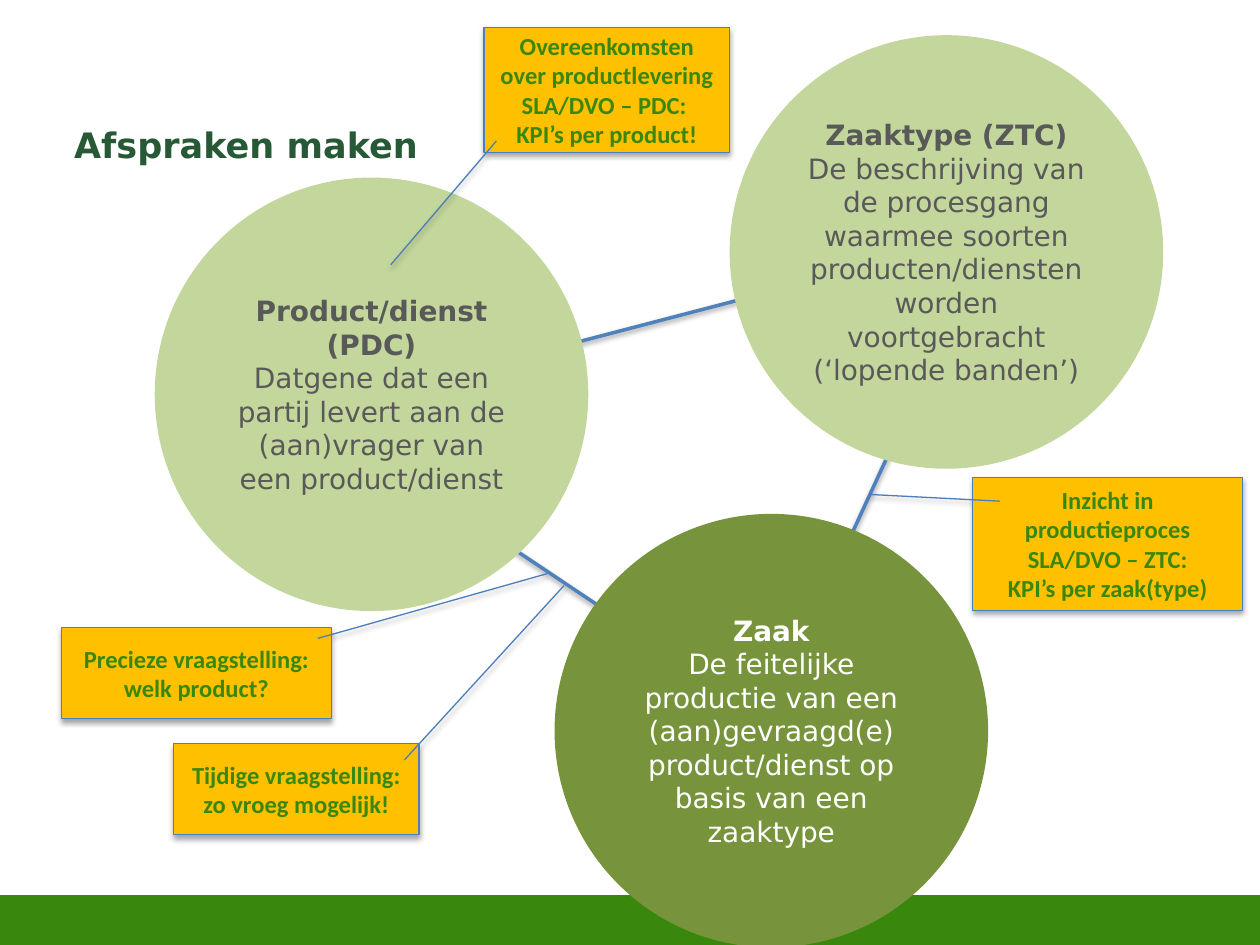
"""Build the slide about agreements on products, case types and cases."""
from pptx import Presentation
from pptx.dml.color import RGBColor
from pptx.enum.shapes import MSO_CONNECTOR, MSO_SHAPE
from pptx.enum.text import MSO_ANCHOR, PP_ALIGN
from pptx.oxml import parse_xml
from pptx.oxml.ns import nsdecls
from pptx.util import Cm, Pt

COLOURS = {
    "bar": "39870C",
    "title": "275937",
    "light": "C3D69B",
    "dark": "77933C",
    "grey": "595959",
    "white": "FFFFFF",
    "note": "FFC000",
    "note line": "4B7EBC",
    "link": "4F81BD",
}
COLOURS = {name: RGBColor.from_string(value) for name, value in COLOURS.items()}


def add_shadow(shape, distance, opacity):
    shape._element.spPr.append(parse_xml(
        f'<a:effectLst {nsdecls("a")}><a:outerShdw blurRad="40000" dist="{distance}" '
        f'dir="5400000" rotWithShape="0"><a:srgbClr val="000000">'
        f'<a:alpha val="{opacity}"/></a:srgbClr></a:outerShdw></a:effectLst>'))


def add_span(para, text, font, size, colour, bold=True):
    span = para.add_run()
    span.text = text
    span.font.name = font
    span.font.size = Pt(size)
    span.font.bold = bold
    span.font.color.rgb = COLOURS[colour]


deck = Presentation()
deck.slide_width, deck.slide_height = Cm(25.4), Cm(19.05)
page = deck.slides.add_slide(deck.slide_layouts[5])

title = page.shapes.title
title.left, title.top, title.width, title.height = Cm(1.24), Cm(2.36), Cm(22.86), Cm(1.85)
title.text_frame.vertical_anchor = MSO_ANCHOR.TOP
para = title.text_frame.paragraphs[0]
para.alignment = PP_ALIGN.LEFT
add_span(para, "Afspraken maken", "DejaVu Sans", 20, "title")

bar = page.shapes.add_shape(MSO_SHAPE.RECTANGLE, Cm(0), Cm(18.08), Cm(25.4), Cm(0.98))
bar.shadow.inherit = False
bar.fill.solid()
bar.fill.fore_color.rgb = COLOURS["bar"]
bar.line.color.rgb = COLOURS["bar"]
bar.line.width = Pt(2)

links = [
    (16.97, 11.2, 18.08, 8.79),
    (10.03, 10.85, 12.5, 12.5),
    (11.51, 6.93, 15.19, 5.97),
]
for ends in links:
    link = page.shapes.add_connector(MSO_CONNECTOR.STRAIGHT, *map(Cm, ends))
    link.line.color.rgb = COLOURS["link"]
    link.line.width = Pt(2)
    add_shadow(link, 20000, 38000)

diameter = Cm(8.74)
circles = [
    (3.12, 3.58, "light", "grey", "Product/dienst (PDC)",
     "Datgene dat een partij levert aan de (aan)vrager van een product/dienst"),
    (11.18, 10.36, "dark", "white", "Zaak",
     "De feitelijke productie van een (aan)gevraagd(e) product/dienst op basis van een zaaktype"),
    (14.71, 0.71, "light", "grey", "Zaaktype (ZTC)",
     "De beschrijving van de procesgang waarmee soorten producten/diensten worden "
     "voortgebracht (‘lopende banden’)"),
]
for left, top, fill, colour, heading, description in circles:
    circle = page.shapes.add_shape(MSO_SHAPE.OVAL, Cm(left), Cm(top), diameter, diameter)
    circle.shadow.inherit = False
    circle.fill.solid()
    circle.fill.fore_color.rgb = COLOURS[fill]
    circle.line.fill.background()
    circle.text_frame.vertical_anchor = MSO_ANCHOR.MIDDLE
    para = circle.text_frame.paragraphs[0]
    para.alignment = PP_ALIGN.CENTER
    add_span(para, heading, "DejaVu Sans", 16, colour)
    para.add_line_break()
    add_span(para, description, "DejaVu Sans", 16, colour, bold=False)

callouts = [
    (1.24, 12.65, 5.44, 1.84, (0.12, 0.95, -0.59, 1.8),
     [["Precieze vraagstelling: welk product?"]]),
    (3.5, 14.99, 4.95, 1.84, (0.18, 0.94, -1.73, 1.59),
     [["Tijdige vraagstelling: zo vroeg mogelijk!"]]),
    (9.76, 0.55, 4.95, 2.52, (0.91, 0.05, 1.9, -0.38),
     [["Overeenkomsten over productlevering SLA/DVO – PDC: ", "KPI’s per product!"]]),
    (19.61, 9.62, 5.44, 2.69, (0.18, 0.1, 0.13, -0.38),
     [["Inzicht in productieproces SLA/DVO – ZTC:"], ["KPI’s per zaak(type)"]]),
]
for left, top, width, height, pointer, paragraphs in callouts:
    callout = page.shapes.add_shape(
        MSO_SHAPE.LINE_CALLOUT_1, Cm(left), Cm(top), Cm(width), Cm(height))
    for index, value in enumerate(pointer):
        callout.adjustments[index] = value
    callout.fill.solid()
    callout.fill.fore_color.rgb = COLOURS["note"]
    callout.line.color.rgb = COLOURS["note line"]
    callout.line.width = Pt(0.75)
    add_shadow(callout, 23000, 35000)
    frame = callout.text_frame
    frame.vertical_anchor = MSO_ANCHOR.MIDDLE
    for number, lines in enumerate(paragraphs):
        para = frame.add_paragraph() if number else frame.paragraphs[0]
        para.alignment = PP_ALIGN.CENTER
        for position, line in enumerate(lines):
            if position:
                para.add_line_break()
            add_span(para, line, "Calibri", 14, "bar")

deck.save("out.pptx")
